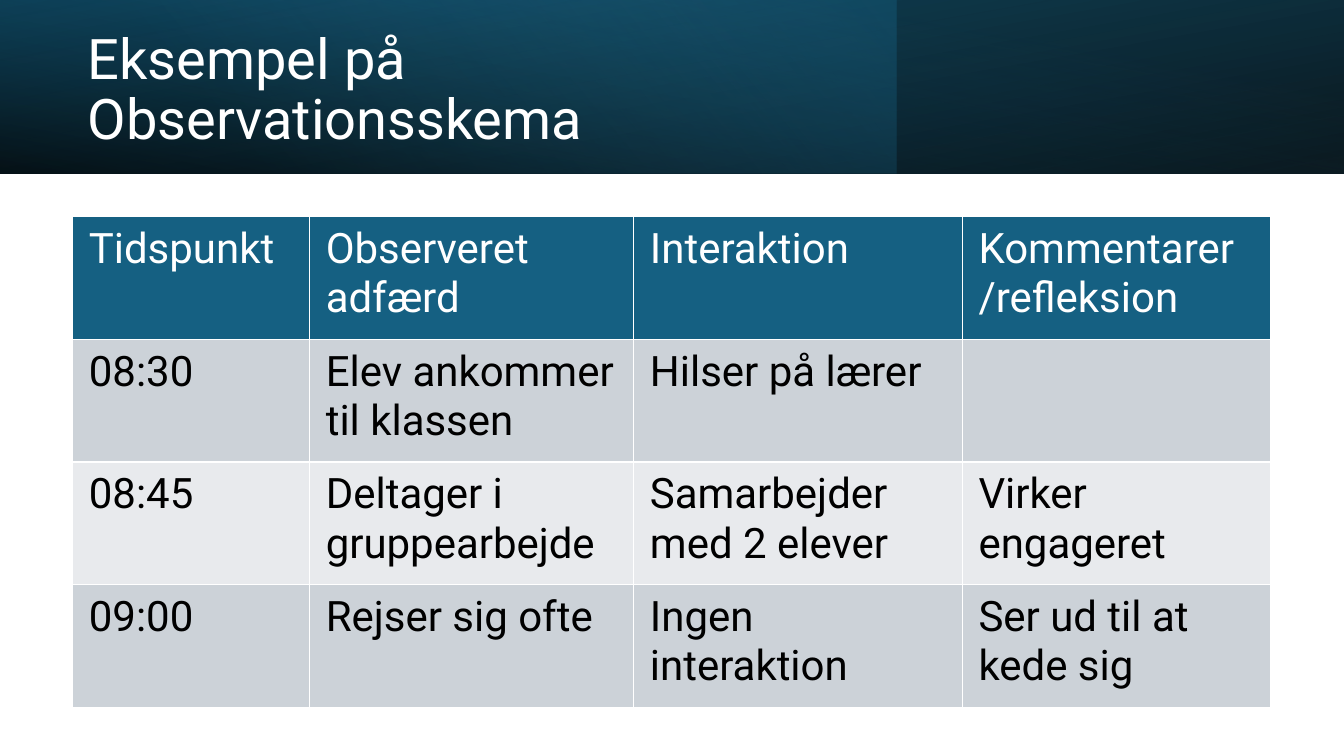
from lxml import etree
from pptx import Presentation
from pptx.dml.color import RGBColor
from pptx.enum.shapes import MSO_SHAPE
from pptx.enum.text import MSO_ANCHOR, MSO_AUTO_SIZE, PP_ALIGN
from pptx.oxml.ns import qn
from pptx.util import Cm, Pt

RECTANGLE = MSO_SHAPE.RECTANGLE
MIDDLE = MSO_ANCHOR.MIDDLE
NO_AUTOFIT = MSO_AUTO_SIZE.NONE
LEFT = PP_ALIGN.LEFT

WHITE = RGBColor(0xFF, 0xFF, 0xFF)
BLACK = RGBColor(0x00, 0x00, 0x00)
TEAL = RGBColor(0x15, 0x60, 0x82)
DEEP_TEAL = RGBColor(0x10, 0x48, 0x62)
SKY = RGBColor(0x46, 0xB1, 0xE1)
GREY = RGBColor(0xCC, 0xD2, 0xD8)
PALE_GREY = RGBColor(0xE8, 0xEA, 0xED)
FONT = "Roboto"


def add_text(para, text, size, color):
    span = para.add_run()
    span.text = text
    span.font.name = FONT
    span.font.size = Pt(size)
    span.font.bold = False
    span.font.color.rgb = color


def add_solid(parent, color, opacity=100):
    """Append a colour, with opacity in percent, to an XML element."""
    tint = etree.SubElement(parent, qn("a:srgbClr"), val=str(color))
    if opacity < 100:
        etree.SubElement(tint, qn("a:alpha"), val=str(opacity * 1000))


deck = Presentation()
deck.slide_width, deck.slide_height = Cm(33.87), Cm(19.05)
page = deck.slides.add_slide(deck.slide_layouts[5])

# Header band: width, rotation, flipped, angle, stops (position, colour, opacity)
header_layers = [
    (33.87, 180, True, 100, [(0, BLACK, 96), (100, DEEP_TEAL, 100)]),
    (22.58, 0, False, 140, [(0, TEAL, 41), (74, SKY, 0)]),
    (33.87, 0, True, 260, [(0, BLACK, 63), (78, TEAL, 15)]),
]
for width, rotation, flipped, angle, stops in header_layers:
    layer = page.shapes.add_shape(RECTANGLE, 0, 0, Cm(width), Cm(4.38))
    layer.shadow.inherit = False
    layer.line.fill.background()
    layer.rotation = rotation
    properties = layer._element.spPr
    if flipped:
        properties.find(qn("a:xfrm")).set("flipH", "1")
    gradient = etree.Element(qn("a:gradFill"), rotWithShape="1")
    stop_list = etree.SubElement(gradient, qn("a:gsLst"))
    for position, color, opacity in stops:
        stop = etree.SubElement(stop_list, qn("a:gs"), pos=str(position * 1000))
        add_solid(stop, color, opacity)
    etree.SubElement(gradient, qn("a:lin"), ang=str(angle * 60000), scaled="0")
    properties.find(qn("a:prstGeom")).addnext(gradient)

# Title, brought in front of the header band
title = page.shapes.title
title.left, title.top = Cm(1.96), Cm(0.69)
title.width, title.height = Cm(19.61), Cm(3.23)
page.shapes._spTree.append(title._element)
frame = title.text_frame
frame.word_wrap = True
frame.auto_size = NO_AUTOFIT
frame.vertical_anchor = MIDDLE
heading = frame.paragraphs[0]
heading.alignment = LEFT
heading.line_spacing = 0.9
add_text(heading, "Eksempel på Observationsskema", 40, WHITE)

# Observation table
rows = [
    ["Tidspunkt", "Observeret adfærd", "Interaktion", "Kommentarer\n/refleksion"],
    ["08:30", "Elev ankommer til klassen", "Hilser på lærer", ""],
    ["08:45", "Deltager i gruppearbejde", "Samarbejder med 2 elever", "Virker engageret"],
    ["09:00", "Rejser sig ofte", "Ingen interaktion", "Ser ud til at kede sig"],
]
column_widths = [5.97, 8.17, 8.28, 7.77]
row_height = 3.09
table = page.shapes.add_table(
    len(rows), len(column_widths), Cm(1.83), Cm(5.46),
    Cm(sum(column_widths)), Cm(row_height * len(rows))).table
table.first_row = False
table.horz_banding = False
for column, width in zip(table.columns, column_widths):
    column.width = Cm(width)

for row_index, texts in enumerate(rows):
    table.rows[row_index].height = Cm(row_height)
    if row_index == 0:
        fill_color, text_color = TEAL, WHITE
    else:
        fill_color = GREY if row_index % 2 else PALE_GREY
        text_color = BLACK
    for column_index, text in enumerate(texts):
        cell = table.cell(row_index, column_index)
        cell.margin_left = cell.margin_right = Cm(0.41)
        cell.margin_top = cell.margin_bottom = Cm(0.2)
        # White borders come before the fill in the cell properties
        cell_properties = cell._tc.get_or_add_tcPr()
        for side in ("lnL", "lnR", "lnT", "lnB"):
            border = etree.SubElement(cell_properties, qn("a:" + side), w=str(Pt(1)))
            add_solid(etree.SubElement(border, qn("a:solidFill")), WHITE)
        cell.fill.solid()
        cell.fill.fore_color.rgb = fill_color
        if not text:
            continue
        for line_index, line in enumerate(text.split("\n")):
            frame = cell.text_frame
            para = frame.add_paragraph() if line_index else frame.paragraphs[0]
            add_text(para, line, 30, text_color)

deck.save("out.pptx")
